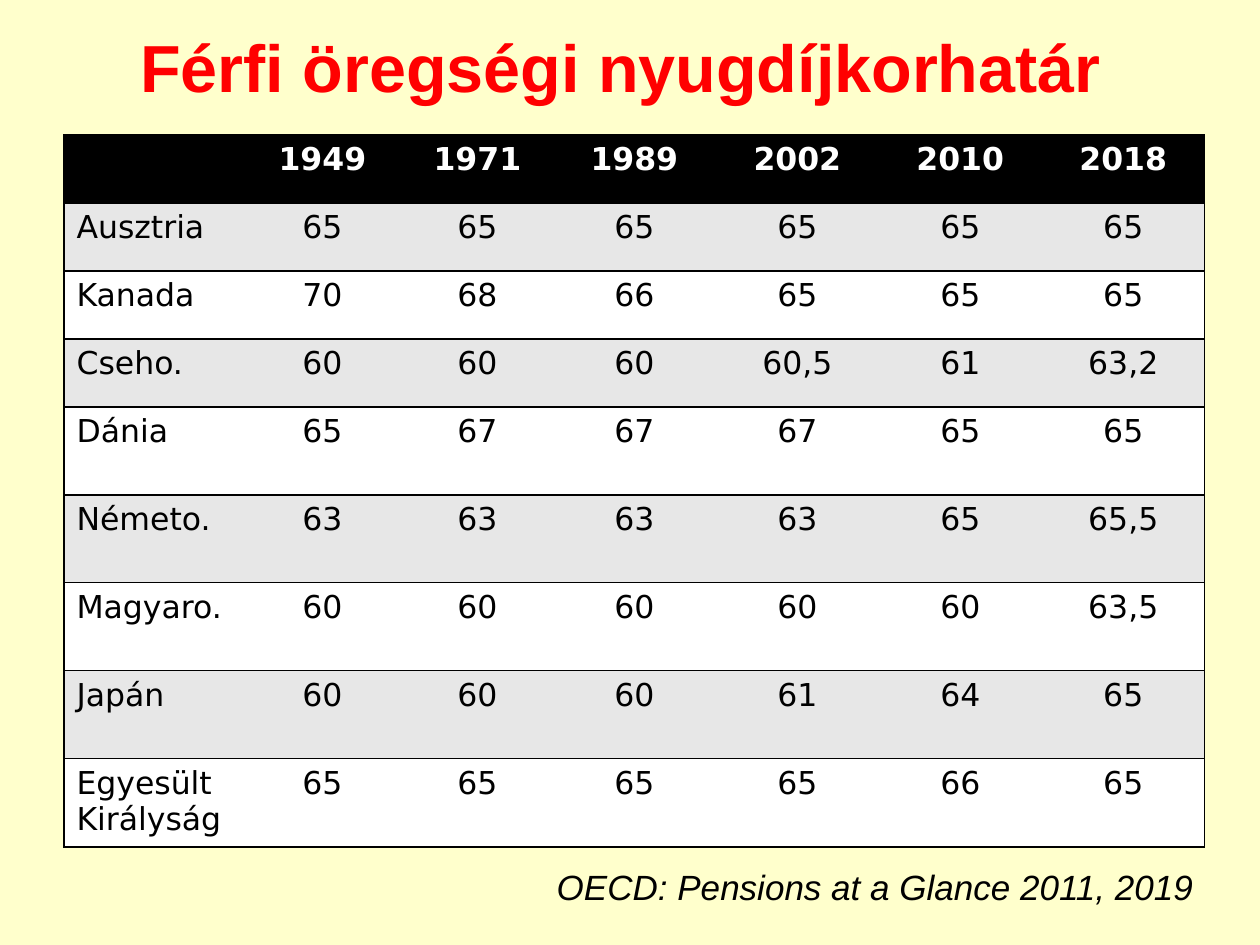
from typing import NamedTuple

from lxml.etree import SubElement as Sub
from pptx import Presentation
from pptx.dml.color import RGBColor
from pptx.enum.text import MSO_ANCHOR as Anchor, PP_ALIGN as Align
from pptx.oxml.ns import qn
from pptx.util import Emu, Pt

SCALE = 914400 // 126
PLAIN = "{2D5ABB26-0587-4C30-8999-92F81FD0307C}"
BLACK, WHITE, GREY = "000000", "FFFFFF", "E7E7E7"


class Box(NamedTuple):
    left: int
    top: int
    width: int
    height: int


class Row(NamedTuple):
    name: str
    ages: str
    height: int


YEARS = Row("", "1949 1971 1989 2002 2010 2018", 68)
LANDS = [
    Row("Ausztria", "65 65 65 65 65 65", 68),
    Row("Kanada", "70 68 66 65 65 65", 68),
    Row("Cseho.", "60 60 60 60,5 61 63,2", 68),
    Row("Dánia", "65 67 67 67 65 65", 88),
    Row("Németo.", "63 63 63 63 65 65,5", 88),
    Row("Magyaro.", "60 60 60 60 60 63,5", 88),
    Row("Japán", "60 60 60 61 64 65", 88),
    Row("Egyesült Királyság", "65 65 65 65 66 65", 88),
]
WIDTHS = [179, 159, 151] + [163] * 4


def px(count: int) -> Emu:
    return Emu(count * SCALE)


def tint(code: str) -> RGBColor:
    return RGBColor.from_string(code)


def write(frame, text: str, *, size=18, font="DejaVu Sans", color=BLACK,
          bold=False, slant=False, align=Align.CENTER, gap=0) -> None:
    frame.word_wrap = True
    para = frame.paragraphs[0]
    para.alignment = align
    para.space_before = Pt(gap)
    run = para.add_run()
    run.text = text
    face = run.font
    face.size, face.name = Pt(size), font
    face.bold, face.italic = bold, slant
    face.color.rgb = tint(color)


def label(slide, box: Box, text: str, anchor=Anchor.TOP, **style) -> None:
    frame = slide.shapes.add_textbox(*map(px, box)).text_frame
    frame.vertical_anchor = anchor
    write(frame, text, **style)


def edge(cell, sides: str) -> None:
    props = cell._tc.get_or_add_tcPr()
    for side in sides:
        line = Sub(props, qn(f"a:ln{side}"), w=str(Pt(1)))
        fill = Sub(line, qn("a:solidFill"))
        Sub(fill, qn("a:srgbClr"), val=BLACK)


def grid(slide, left: int, top: int, rows: list[Row]) -> None:
    box = Box(left, top, sum(WIDTHS), sum(row.height for row in rows))
    table = slide.shapes.add_table(
        len(rows), len(WIDTHS), *map(px, box)).table
    table._tbl.tblPr.find(qn("a:tableStyleId")).text = PLAIN
    table.horz_banding = False
    for col, width in zip(table.columns, WIDTHS):
        col.width = px(width)
    last = len(WIDTHS) - 1
    for i, row in enumerate(rows):
        table.rows[i].height = px(row.height)
        head = i == 0
        back = BLACK if head else GREY if i % 2 else WHITE
        for j, text in enumerate([row.name, *row.ages.split()]):
            cell = table.cell(i, j)
            edge(cell, {0: "LTB", last: "RTB"}.get(j, "TB"))
            cell.fill.solid()
            cell.fill.fore_color.rgb = tint(back)
            if text:
                write(cell.text_frame, text, bold=head,
                      color=WHITE if head else BLACK,
                      align=Align.CENTER if j else Align.LEFT)


def main() -> None:
    deck = Presentation()
    deck.slide_width, deck.slide_height = px(1260), px(945)
    slide = deck.slides.add_slide(deck.slide_layouts[6])
    back = slide.background.fill
    back.solid()
    back.fore_color.rgb = tint("FFFFCC")
    label(slide, Box(54, 6, 1134, 120), "Férfi öregségi nyugdíjkorhatár",
          Anchor.MIDDLE, size=38, font="Arial", color="FF0000", bold=True)
    grid(slide, 64, 135, [YEARS, *LANDS])
    label(slide, Box(44, 859, 1162, 59), "OECD: Pensions at a Glance 2011, 2019",
          size=20, font="Arial", slant=True, align=Align.RIGHT, gap=1)
    deck.save("out.pptx")


if __name__ == "__main__":
    main()
